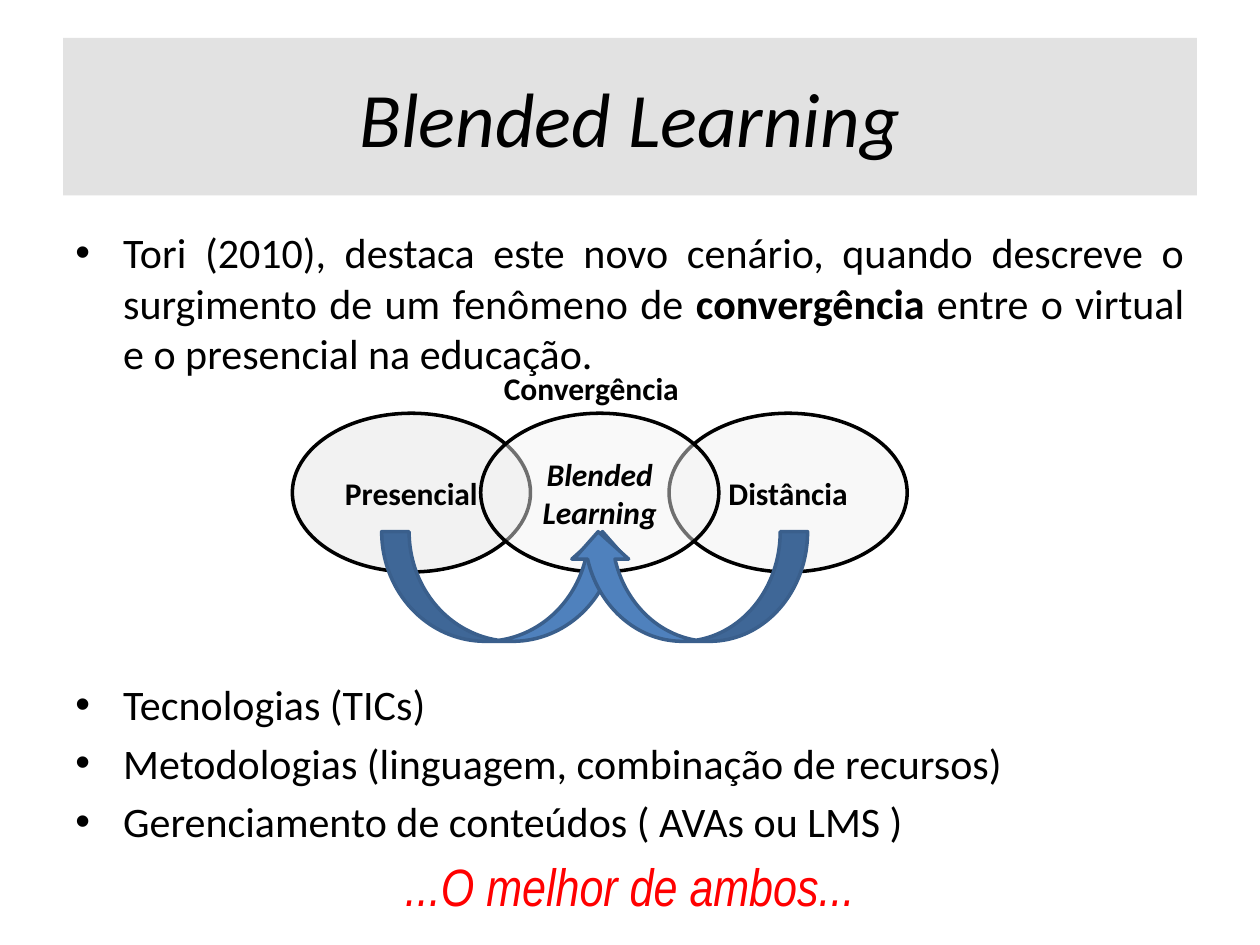
from dataclasses import dataclass
from typing import NamedTuple

from lxml.etree import SubElement
from pptx import Presentation
from pptx.dml.color import RGBColor
from pptx.enum.shapes import MSO_SHAPE as Shape
from pptx.enum.text import MSO_ANCHOR as Anchor, PP_ALIGN as Align
from pptx.oxml.ns import qn
from pptx.util import Inches, Pt


@dataclass(frozen=True)
class Theme:
    ink: str = "000000"
    accent: str = "FF0000"
    band: str = "D9D9D9"
    oval: str = "F2F2F2"
    arrow: str = "4F81BD"
    arrow_edge: str = "3A5F8C"
    font: str = "Calibri"
    closing_font: str = "Arial Narrow"
    title_size: float = 44
    body_size: float = 24
    closing_size: float = 30
    label_size: float = 18
    line_width: float = 2
    para_gap: float = 4.5
    diagram_gap: float = 172  # room for the diagram between two bullets


class Area(NamedTuple):
    """A rectangle in percent of the slide's width and height."""
    left: float
    top: float
    width: float
    height: float


class Span(NamedTuple):
    text: str
    bold: bool = False
    italic: bool = False


class Oval(NamedTuple):
    column: int
    label: Span
    opacity: int


class Arrow(NamedTuple):
    left: float
    width: float
    mirrored: bool


THEME = Theme()
SLIDE_WIDTH, SLIDE_HEIGHT = Inches(10), Inches(7.5)
TITLE_AREA = Area(5, 4, 90, 16.67)
BODY_AREA = Area(5, 23.33, 90, 71.87)
LABEL_AREA = Area(39, 38.4, 16, 5.33)
OVAL_AREA = Area(23.2, 43.73, 18.9, 16.8)
OVAL_PITCH = 14.95
ARROW_TOP, ARROW_HEIGHT = 56.27, 11.6

OVALS = [
    Oval(0, Span("Presencial", bold=True), 100),
    Oval(2, Span("Distância", bold=True), 50),
    Oval(1, Span("Blended Learning", bold=True, italic=True), 46),
]
ARROWS = [Arrow(30.3, 19.7, False), Arrow(45.3, 18.8, True)]
INTRO = [
    Span("Tori (2010), destaca este novo cenário, quando descreve o "
         "surgimento de um fenômeno de "),
    Span("convergência", bold=True),
    Span(" entre o virtual e o presencial na educação."),
]
TOPICS = [
    "Tecnologias (TICs)",
    "Metodologias (linguagem, combinação de recursos)",
    "Gerenciamento de conteúdos ( AVAs ou LMS )",
]


def to_emu(area: Area) -> tuple[int, int, int, int]:
    return (round(area.left * SLIDE_WIDTH / 100), round(area.top * SLIDE_HEIGHT / 100),
            round(area.width * SLIDE_WIDTH / 100), round(area.height * SLIDE_HEIGHT / 100))


def set_fill(shape, color: str, opacity: int = 100) -> None:
    shape.fill.solid()
    shape.fill.fore_color.rgb = RGBColor.from_string(color)
    if opacity < 100:
        tint = shape.fill._xPr.find(qn("a:solidFill"))[0]
        SubElement(tint, qn("a:alpha"), val=str(opacity * 1000))


def write(para, spans: list[Span], *, size: float, font: str = THEME.font,
          color: str = THEME.ink, align=Align.CENTER, before: float = 0,
          bullet: bool = False) -> None:
    para.alignment = align
    para.space_before = Pt(before)
    if bullet:
        props = para._p.get_or_add_pPr()
        props.set("marL", str(Inches(0.38)))
        props.set("indent", str(-Inches(0.38)))
        SubElement(props, qn("a:buFont"), typeface="Arial")
        SubElement(props, qn("a:buChar"), char="•")
    for span in spans:
        run = para.add_run()
        run.text = span.text
        run.font.name, run.font.size = font, Pt(size)
        run.font.bold, run.font.italic = span.bold, span.italic
        run.font.color.rgb = RGBColor.from_string(color)


def add_figure(page, kind, area: Area, fill: str, edge: str, opacity: int = 100):
    shape = page.shapes.add_shape(kind, *to_emu(area))
    shape.shadow.inherit = False
    set_fill(shape, fill, opacity)
    shape.line.color.rgb = RGBColor.from_string(edge)
    shape.line.width = Pt(THEME.line_width)
    return shape


def add_title(page) -> None:
    title = page.shapes.title
    title.left, title.top, title.width, title.height = to_emu(TITLE_AREA)
    set_fill(title, THEME.band, 75)
    title.text_frame.vertical_anchor = Anchor.MIDDLE
    write(title.text_frame.paragraphs[0], [Span("Blended Learning", italic=True)],
          size=THEME.title_size)


def add_body(page) -> None:
    frame = page.shapes.add_textbox(*to_emu(BODY_AREA)).text_frame
    frame.word_wrap = True
    write(frame.paragraphs[0], INTRO, size=THEME.body_size,
          align=Align.JUSTIFY, bullet=True)
    for index, topic in enumerate(TOPICS):
        write(frame.add_paragraph(), [Span(topic)], size=THEME.body_size,
              align=Align.JUSTIFY, bullet=True,
              before=THEME.para_gap if index else THEME.diagram_gap)
    write(frame.add_paragraph(), [Span("...O melhor de ambos...", italic=True)],
          size=THEME.closing_size, font=THEME.closing_font, color=THEME.accent,
          before=THEME.para_gap)


def add_oval(page, oval: Oval) -> None:
    area = OVAL_AREA._replace(left=OVAL_AREA.left + oval.column * OVAL_PITCH)
    shape = add_figure(page, Shape.OVAL, area, THEME.oval, THEME.ink, oval.opacity)
    shape.text_frame.word_wrap = True
    shape.text_frame.vertical_anchor = Anchor.MIDDLE
    write(shape.text_frame.paragraphs[0], [oval.label], size=THEME.label_size)


def add_arrow(page, arrow: Arrow) -> None:
    area = Area(arrow.left, ARROW_TOP, arrow.width, ARROW_HEIGHT)
    shape = add_figure(page, Shape.CURVED_UP_ARROW, area, THEME.arrow, THEME.arrow_edge)
    if arrow.mirrored:
        shape._element.spPr.find(qn("a:xfrm")).set("flipH", "1")


def add_label(page) -> None:
    frame = page.shapes.add_textbox(*to_emu(LABEL_AREA)).text_frame
    frame.word_wrap = False
    write(frame.paragraphs[0], [Span("Convergência", bold=True)],
          size=THEME.label_size, align=Align.LEFT)


def main() -> None:
    deck = Presentation()
    deck.slide_width, deck.slide_height = SLIDE_WIDTH, SLIDE_HEIGHT
    page = deck.slides.add_slide(deck.slide_layouts[5])
    add_title(page)
    add_body(page)
    for oval in OVALS:
        add_oval(page, oval)
    for arrow in ARROWS:
        add_arrow(page, arrow)
    add_label(page)
    deck.save("out.pptx")


if __name__ == "__main__":
    main()
